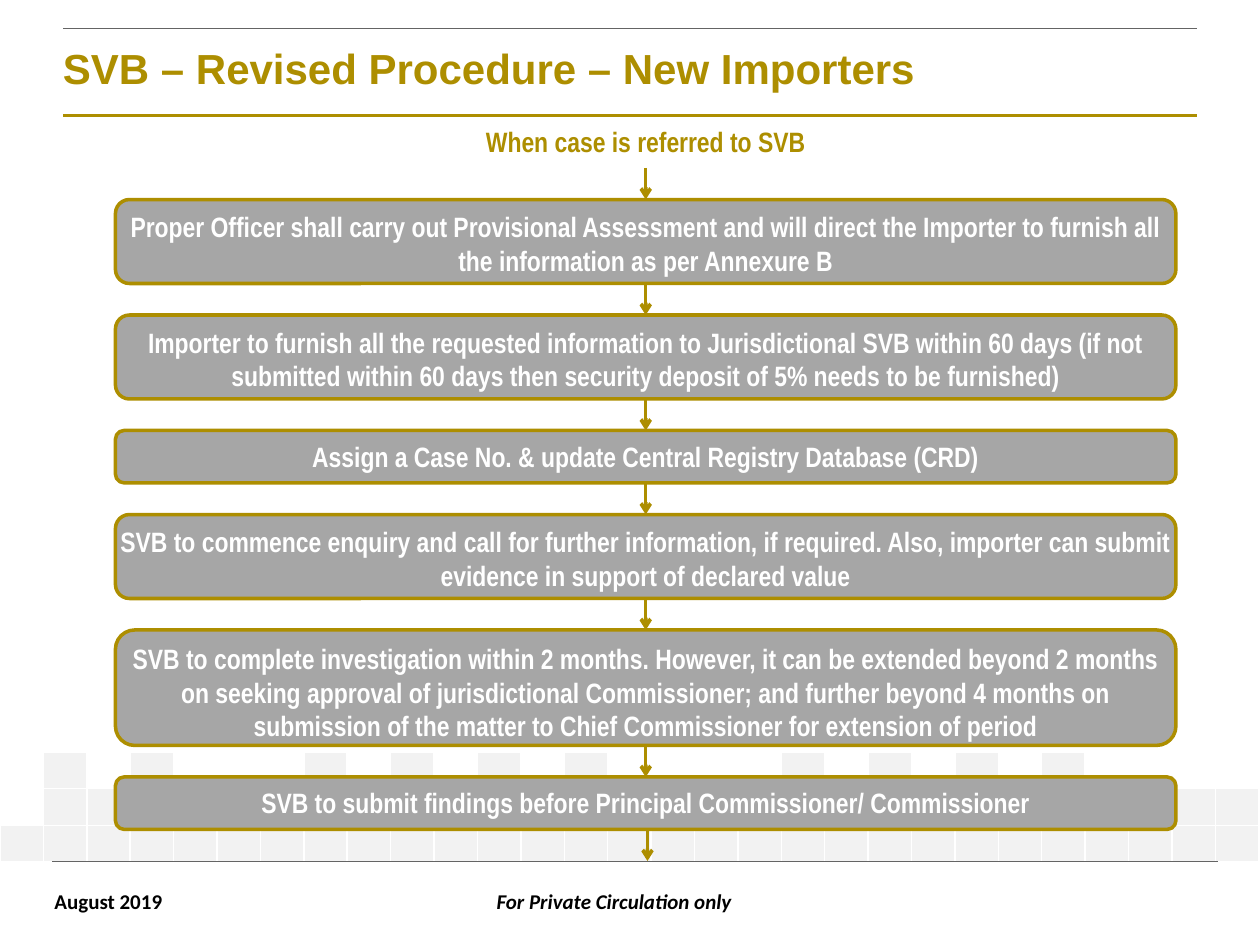
from dataclasses import dataclass
from lxml.etree import SubElement
from pptx import Presentation
from pptx.dml.color import RGBColor
from pptx.enum.shapes import MSO_CONNECTOR, MSO_SHAPE
from pptx.enum.text import MSO_ANCHOR, PP_ALIGN
from pptx.oxml.ns import qn
from pptx.util import Pt


@dataclass
class Theme:
    gold: str = "AD8E00"
    gray: str = "A6A6A6"
    pale: str = "F2F2F2"
    rule: str = "646464"
    white: str = "FFFFFF"
    black: str = "000000"
    head: int = 24
    body: int = 16
    foot: int = 12
    tiny: int = 6


class Deck:
    def __init__(self, theme):
        self.theme = theme
        self.file = Presentation()
        self.file.slide_width, self.file.slide_height = Pt(720), Pt(540)
        self.slide = self.file.slides.add_slide(self.file.slide_layouts[6])
        self.shapes = self.slide.shapes

    def label(self, frame, text, font, size, color, pads, align=PP_ALIGN.LEFT):
        frame.text = text
        frame.margin_left, frame.margin_top, frame.margin_right, frame.margin_bottom = map(Pt, pads)
        line = frame.paragraphs[0]
        line.alignment = align
        style = line.runs[0].font
        style.name, style.size, style.bold = font, Pt(size), True
        style.color.rgb = RGBColor.from_string(color)
        return line

    def title(self, text):
        frame = self.shapes.add_textbox(Pt(36), Pt(16), Pt(648), Pt(47.5)).text_frame
        frame.word_wrap = True
        frame.vertical_anchor = MSO_ANCHOR.MIDDLE
        line = self.label(frame, text, "Arial", self.theme.head, self.theme.gold, (0, 3, 0, 0))
        line.line_spacing = 0.85

    def footer(self, text, left, width, wrap=False):
        frame = self.shapes.add_textbox(Pt(left), Pt(504), Pt(width), Pt(21.8)).text_frame
        frame.word_wrap = wrap
        align = PP_ALIGN.CENTER if wrap else PP_ALIGN.LEFT
        line = self.label(frame, text, "Calibri", self.theme.foot, self.theme.black,
                          (7.2, 3.6, 7.2, 3.6), align)
        line.runs[0].font.italic = wrap

    def step(self, text, top, high, filled=True):
        box = self.shapes.add_shape(MSO_SHAPE.ROUNDED_RECTANGLE, Pt(66), Pt(top), Pt(606), Pt(high))
        box.shadow.inherit = False
        color = self.theme.gold
        if filled:
            box.fill.solid()
            box.fill.fore_color.rgb = RGBColor.from_string(self.theme.gray)
            box.line.color.rgb = RGBColor.from_string(color)
            box.line.width = Pt(2)
            color = self.theme.white
        else:
            box.fill.background()
            box.line.fill.background()
        box.text_frame.word_wrap = True
        box.text_frame.vertical_anchor = MSO_ANCHOR.TOP
        self.label(box.text_frame, text, "Arial Narrow", self.theme.body, color,
                   (0, 3.6, 0, 3.6), PP_ALIGN.CENTER)

    def line(self, start, end, color, width, arrow=False):
        wire = self.shapes.add_connector(MSO_CONNECTOR.STRAIGHT, *map(Pt, start + end))
        wire.line.color.rgb = RGBColor.from_string(color)
        wire.line.width = Pt(width)
        if arrow:
            SubElement(wire.line._get_or_add_ln(), qn("a:tailEnd"), type="arrow")
        SubElement(wire._element.spPr, qn("a:effectLst"))

    def arrow(self, x, top, high):
        self.line((x, top), (x, top + high), self.theme.gold, 2, True)

    def tiles(self, rows, count, top, high):
        table = self.shapes.add_table(len(rows), count, 0, Pt(top), Pt(720), Pt(high * len(rows))).table
        table.first_row = table.horz_banding = False
        for col in table.columns:
            col.width = Pt(720 / count)
        for y, shaded in enumerate(rows):
            table.rows[y].height = Pt(high)
            for x in range(count):
                self.tile(table.cell(y, x), x in shaded)

    def tile(self, cell, shaded):
        cell.margin_left = cell.margin_right = cell.margin_top = cell.margin_bottom = 0
        SubElement(cell.text_frame.paragraphs[0]._p, qn("a:endParaRPr"), sz=str(self.theme.tiny * 100))
        props = cell._tc.get_or_add_tcPr()
        for side in "LRTB":
            edge = SubElement(props, qn(f"a:ln{side}"), w=str(int(Pt(1))))
            fill = SubElement(edge, qn("a:solidFill"))
            SubElement(fill, qn("a:srgbClr"), val=self.theme.white)
        if shaded:
            cell.fill.solid()
            cell.fill.fore_color.rgb = RGBColor.from_string(self.theme.pale)
        else:
            cell.fill.background()


STEPS = [
    ("Proper Officer shall carry out Provisional Assessment and will direct the Importer "
     "to furnish all the information as per Annexure B", 48),
    ("Importer to furnish all the requested information to Jurisdictional SVB within 60 days "
     "(if not submitted within 60 days then security deposit of 5% needs to be furnished)", 48),
    ("Assign a Case No. & update Central Registry Database (CRD)", 30),
    ("SVB to commence enquiry and call for further information, if required. Also, importer "
     "can submit evidence in support of declared value", 48),
    ("SVB to complete investigation within 2 months. However, it can be extended beyond "
     "2 months on seeking approval of jurisdictional Commissioner; and further beyond 4 months "
     "on submission of the matter to Chief Commissioner for extension of period", 66),
    ("SVB to submit findings before Principal Commissioner/ Commissioner", 30),
]


def main():
    theme = Theme()
    deck = Deck(theme)
    count, gap = 29, 18
    every = set(range(count))
    peaks = {1, 3, 7, 9, 11, 13, 18, 20, 22, 24}
    holes = {0, 4, 7, 11, 15, 18, 22, 26}
    deck.tiles([peaks, every - holes, every], count, 429.84, 20.88)
    deck.line((36, 66), (684, 66), theme.gold, 1.5)
    deck.line((36, 16), (684, 16), theme.rule, 0.5)
    deck.line((30, 492), (696, 492), theme.rule, 0.25)
    deck.footer("August 2019", 24, 77)
    deck.footer("For Private Circulation only", 174, 354, True)
    deck.title("SVB – Revised Procedure – New Importers")

    deck.step("When case is referred to SVB", 66, 30, False)
    top = 96
    for text, high in STEPS:
        deck.arrow(369, top, gap)
        deck.step(text, top + gap, high)
        top += gap + high
    deck.arrow(370, top, gap)
    deck.file.save("out.pptx")


if __name__ == "__main__":
    main()
